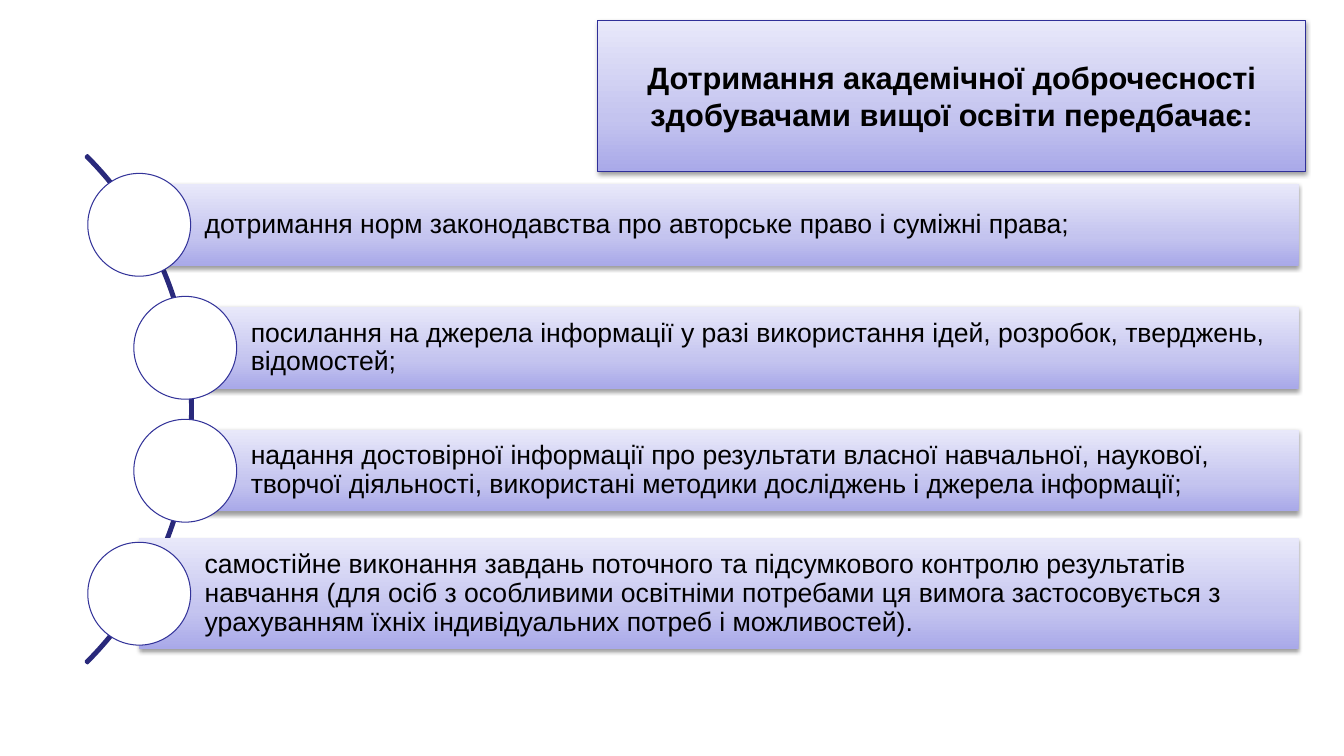
from dataclasses import dataclass
from math import sqrt

from lxml.etree import SubElement
from pptx import Presentation
from pptx.dml.color import RGBColor
from pptx.enum.shapes import MSO_SHAPE as Preset
from pptx.enum.text import MSO_ANCHOR as Anchor, MSO_AUTO_SIZE as AutoSize, PP_ALIGN as Align
from pptx.oxml.ns import qn
from pptx.util import Inches, Pt

TITLE = "Дотримання академічної доброчесності здобувачами вищої освіти передбачає:"
# (text, bar height in inches)
REQUIREMENTS = [
    ("дотримання норм законодавства про авторське право і суміжні права;", 0.81),
    ("посилання на джерела інформації у разі використання ідей, розробок, "
     "тверджень, відомостей;", 0.81),
    ("надання достовірної інформації про результати власної навчальної, наукової, "
     "творчої діяльності, використані методики досліджень і джерела інформації;", 0.81),
    ("самостійне виконання завдань поточного та підсумкового контролю результатів "
     "навчання (для осіб з особливими освітніми потребами ця вимога застосовується "
     "з урахуванням їхніх індивідуальних потреб і можливостей).", 1.1),
]


@dataclass(frozen=True)
class Theme:
    font: str = "Arial"
    title_size: int = 22
    body_size: int = 19
    text: str = "000000"
    circle_fill: str = "FFFFFF"
    circle_line: str = "333399"
    title_line: str = "2F2F98"
    arc_line: str = "29297B"
    shadow: str = "000000"
    gradient: tuple = ((0, "A9A9E9"), (35, "C4C4EF"), (100, "E8E8FA"))


THEME = Theme()

# Geometry in inches: circles sit on an arc whose centre is left of the slide
ARC_X, ARC_Y, ARC_SIZE = -1.65, 4.06, 7.12
TRACK_RADIUS = 3.54
ROW_PITCH = 1.22
CIRCLE_SIZE = 1.02
BAR_RIGHT = 12.88


def set_line(shape, color, width):
    shape.line.color.rgb = RGBColor.from_string(color)
    shape.line.width = Pt(width)


def style_panel(shape):
    """Give a panel the vertical gradient and the soft shadow below it."""
    shape.fill.gradient()
    shape.fill.gradient_angle = 90
    properties = shape.element.spPr
    stops = properties.find(qn("a:gradFill")).find(qn("a:gsLst"))
    for stop in list(stops):
        stops.remove(stop)
    for position, color in THEME.gradient:
        stop = SubElement(stops, qn("a:gs"), pos=str(position * 1000))
        SubElement(stop, qn("a:srgbClr"), val=color)

    shape.shadow.inherit = False
    shadow = SubElement(properties.find(qn("a:effectLst")), qn("a:outerShdw"),
                        blurRad=str(Pt(3.1)), dist=str(Pt(1.6)),
                        dir="5400000", rotWithShape="0")
    shade = SubElement(shadow, qn("a:srgbClr"), val=THEME.shadow)
    SubElement(shade, qn("a:alpha"), val="38000")


def write_text(shape, text, size, align, bold=False):
    frame = shape.text_frame
    frame.word_wrap = True
    frame.auto_size = AutoSize.NONE
    frame.vertical_anchor = Anchor.MIDDLE
    para = frame.paragraphs[0]
    para.alignment = align
    span = para.add_run()
    span.text = text
    span.font.name = THEME.font
    span.font.size = Pt(size)
    span.font.bold = bold
    span.font.color.rgb = RGBColor.from_string(THEME.text)
    return frame


def add_title(page):
    title = page.shapes.title
    title.left, title.top = Inches(5.93), Inches(0.2)
    title.width, title.height = Inches(7.02), Inches(1.5)
    style_panel(title)
    set_line(title, THEME.title_line, 0.75)
    write_text(title, TITLE, THEME.title_size, Align.CENTER, bold=True)


def add_arc(page):
    arc = page.shapes.add_shape(
        Preset.BLOCK_ARC, Inches(ARC_X - ARC_SIZE / 2), Inches(ARC_Y - ARC_SIZE / 2),
        Inches(ARC_SIZE), Inches(ARC_SIZE))
    for index, value in enumerate((189, 27, 0.003)):
        arc.adjustments[index] = value
    arc.fill.background()
    arc.shadow.inherit = False
    set_line(arc, THEME.arc_line, 2)


def add_requirement(page, text, height, center_y):
    center_x = ARC_X + sqrt(TRACK_RADIUS ** 2 - (center_y - ARC_Y) ** 2)
    bar = page.shapes.add_shape(
        Preset.RECTANGLE, Inches(center_x), Inches(center_y - height / 2),
        Inches(BAR_RIGHT - center_x), Inches(height))
    style_panel(bar)
    bar.line.fill.background()
    frame = write_text(bar, text, THEME.body_size, Align.LEFT)
    frame.margin_left = Inches(0.65)
    frame.margin_top = frame.margin_right = frame.margin_bottom = Inches(0.05)
    frame.paragraphs[0].line_spacing = 0.9

    circle = page.shapes.add_shape(
        Preset.OVAL, Inches(center_x - CIRCLE_SIZE / 2),
        Inches(center_y - CIRCLE_SIZE / 2), Inches(CIRCLE_SIZE), Inches(CIRCLE_SIZE))
    circle.fill.solid()
    circle.fill.fore_color.rgb = RGBColor.from_string(THEME.circle_fill)
    circle.shadow.inherit = False
    set_line(circle, THEME.circle_line, 0.75)


def main():
    deck = Presentation()
    deck.slide_width, deck.slide_height = Inches(13.33), Inches(7.5)
    page = deck.slides.add_slide(deck.slide_layouts.get_by_name("Title Only"))
    add_title(page)
    add_arc(page)
    first_y = ARC_Y - ROW_PITCH * (len(REQUIREMENTS) - 1) / 2
    for row, (text, height) in enumerate(REQUIREMENTS):
        add_requirement(page, text, height, first_y + row * ROW_PITCH)
    deck.save("out.pptx")


if __name__ == "__main__":
    main()
